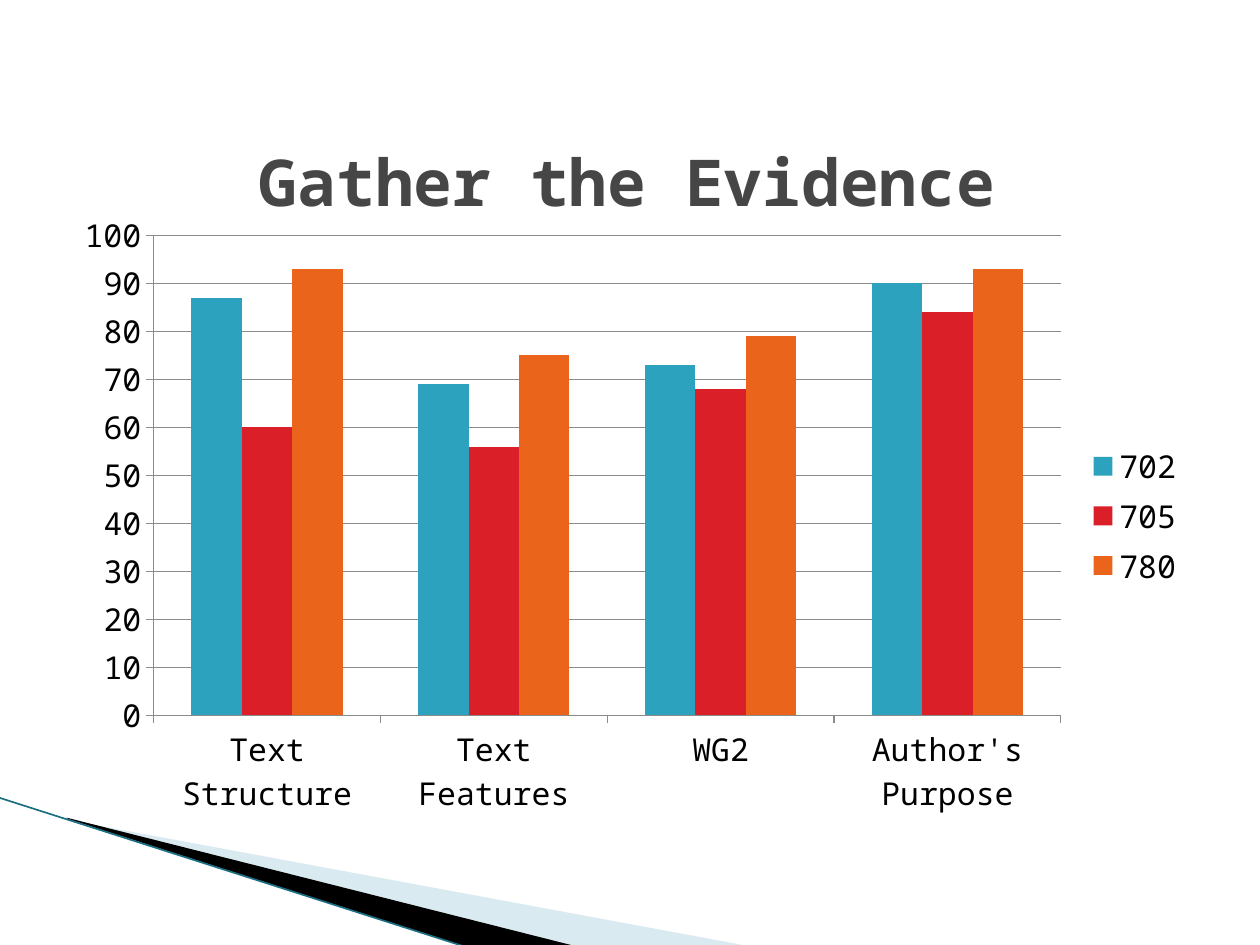
from dataclasses import dataclass

from lxml.etree import SubElement
from pptx import Presentation
from pptx.chart.data import CategoryChartData
from pptx.dml.color import RGBColor
from pptx.enum.chart import XL_CHART_TYPE, XL_LEGEND_POSITION, XL_TICK_MARK
from pptx.enum.shapes import MSO_CONNECTOR
from pptx.enum.text import MSO_ANCHOR, PP_ALIGN
from pptx.oxml import parse_xml
from pptx.oxml.ns import nsdecls, qn
from pptx.util import Inches, Pt


@dataclass(frozen=True)
class Theme:
    """Hold the colours, font and type sizes of the slide."""

    font: str = "Noto Sans Mono"
    title_size: float = 36.9
    chart_size: float = 18
    title: str = "464646"
    text: str = "000000"
    grid: str = "8B8B8B"
    pale_wedge: str = "A0CBDC"
    dark_wedge: str = "000000"
    edge: str = "1A6F82"
    series: tuple = ("2DA2BF", "DA1F28", "EB641B")


THEME = Theme()
CATEGORIES = ("Text Structure", "Text Features", "WG2", "Author's Purpose")
SCORES = {
    "702": (87, 69, 73, 90),
    "705": (60, 56, 68, 84),
    "780": (93, 75, 79, 93),
}
PLOT_AREA = {"x": 0.08, "y": 0.05, "w": 0.8, "h": 0.77}


def color(value):
    """Turn a hex string into a colour."""
    return RGBColor.from_string(value)


def style_font(font, size, value):
    """Give a font the slide's typeface, a size and a colour."""
    font.name = THEME.font
    font.size = Pt(size)
    font.color.rgb = color(value)


def add_wedge(slide, points, fill, opacity=100):
    """Draw a filled polygon without an outline."""
    corners = [(Inches(x), Inches(y)) for x, y in points]
    builder = slide.shapes.build_freeform(*corners[0], scale=1.0)
    builder.add_line_segments(corners[1:], close=True)
    shape = builder.convert_to_shape()
    shape.shadow.inherit = False
    shape.fill.solid()
    shape.fill.fore_color.rgb = color(fill)
    shape.line.fill.background()
    if opacity < 100:
        fill_color = shape.fill._xPr.find(qn("a:solidFill"))[0]
        SubElement(fill_color, qn("a:alpha")).set("val", str(opacity * 1000))


def add_edge(slide, start, end):
    """Draw the thin line along the wedges."""
    ends = [Inches(value) for value in (*start, *end)]
    connector = slide.shapes.add_connector(MSO_CONNECTOR.STRAIGHT, *ends)
    connector.line.color.rgb = color(THEME.edge)
    connector.line.width = Pt(0.95)
    SubElement(connector._element.spPr, qn("a:effectLst"))


def style_axis(axis):
    """Give an axis its line and outside ticks."""
    axis.format.line.color.rgb = color(THEME.grid)
    axis.major_tick_mark = XL_TICK_MARK.OUTSIDE
    axis.minor_tick_mark = XL_TICK_MARK.NONE


def place_plot(chart):
    """Fix the inner plot area as fractions of the chart."""
    plot_area = chart._chartSpace.chart.plotArea
    for layout in plot_area.findall(qn("c:layout")):
        plot_area.remove(layout)
    modes = '<c:xMode val="edge"/><c:yMode val="edge"/>'
    sizes = "".join(f'<c:{key} val="{value}"/>' for key, value in PLOT_AREA.items())
    plot_area.insert(0, parse_xml(
        f'<c:layout {nsdecls("c")}><c:manualLayout><c:layoutTarget val="inner"/>'
        f"{modes}{sizes}</c:manualLayout></c:layout>"
    ))


def add_score_chart(slide):
    """Add the clustered columns of scores by class."""
    data = CategoryChartData()
    data.categories = CATEGORIES
    for name, values in SCORES.items():
        data.add_series(name, values)
    chart = slide.shapes.add_chart(
        XL_CHART_TYPE.COLUMN_CLUSTERED,
        Inches(0.5), Inches(1.62), Inches(9), Inches(4.95), data,
    ).chart
    chart.has_title = False
    style_font(chart.font, THEME.chart_size, THEME.text)
    chart.has_legend = True
    chart.legend.position = XL_LEGEND_POSITION.RIGHT
    chart.legend.include_in_layout = False
    style_axis(chart.category_axis)
    style_axis(chart.value_axis)
    chart.value_axis.minimum_scale = 0
    chart.value_axis.maximum_scale = 100
    chart.value_axis.major_unit = 10
    chart.value_axis.major_gridlines.format.line.color.rgb = color(THEME.grid)
    plot = chart.plots[0]
    plot.vary_by_categories = False
    plot.gap_width = 150
    plot.overlap = 0
    for series, fill in zip(plot.series, THEME.series):
        series.format.fill.solid()
        series.format.fill.fore_color.rgb = color(fill)
    place_plot(chart)


def add_title(slide, text):
    """Add the centred bold title."""
    box = slide.shapes.add_textbox(Inches(1.14), Inches(1.12), Inches(7.68), Inches(0.63))
    frame = box.text_frame
    frame.word_wrap = True
    frame.vertical_anchor = MSO_ANCHOR.MIDDLE
    frame.text = text
    paragraph = frame.paragraphs[0]
    paragraph.alignment = PP_ALIGN.CENTER
    font = paragraph.runs[0].font
    style_font(font, THEME.title_size, THEME.title)
    font.bold = True


def main():
    """Build and save the slide."""
    presentation = Presentation()
    presentation.slide_width = Inches(10)
    presentation.slide_height = Inches(7.5)
    slide = presentation.slides.add_slide(presentation.slide_layouts[6])
    add_wedge(slide, [(0.55, 6.51), (5.95, 7.51), (4.56, 7.51), (0.55, 6.5)],
              THEME.pale_wedge, opacity=40)
    add_wedge(slide, [(0.53, 6.49), (4.57, 7.51), (3.72, 7.52), (0.54, 6.5)],
              THEME.dark_wedge)
    add_edge(slide, (-0.01, 6.33), (3.71, 7.52))
    add_score_chart(slide)
    add_title(slide, "Gather the Evidence")
    presentation.save("out.pptx")


if __name__ == "__main__":
    main()
